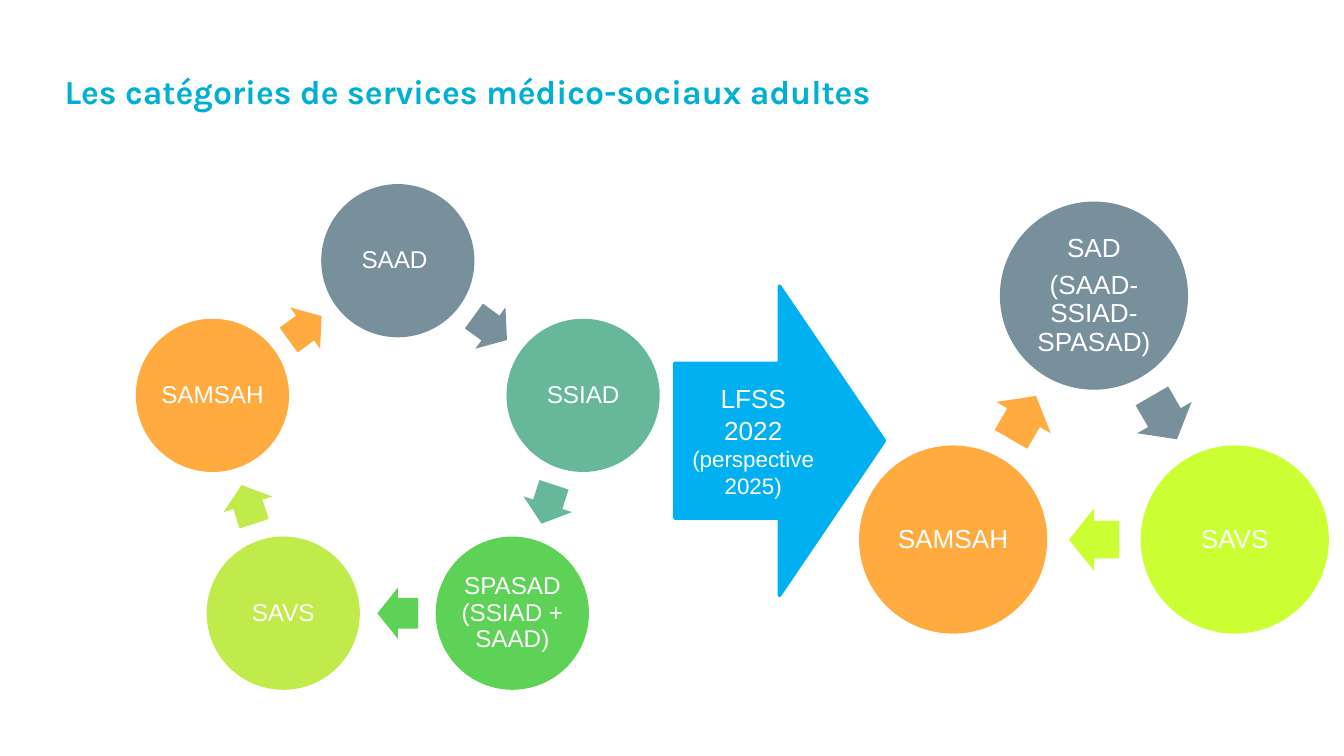
"""Build a slide that shows two cycles of services joined by an arrow."""
import math

import pptx
import pptx.dml.color
import pptx.enum.shapes
import pptx.enum.text
import pptx.util

RGBColor = pptx.dml.color.RGBColor
SHAPE = pptx.enum.shapes.MSO_SHAPE
ALIGN = pptx.enum.text.PP_ALIGN
ANCHOR = pptx.enum.text.MSO_ANCHOR
Inches = pptx.util.Inches

TITLE_BLUE = RGBColor(0x00, 0xAF, 0xD4)
ARROW_BLUE = RGBColor(0x00, 0xB0, 0xF0)
WHITE = RGBColor(0xFF, 0xFF, 0xFF)
SLATE = RGBColor(0x78, 0x90, 0x9C)
TEAL = RGBColor(0x67, 0xB8, 0x9B)
GREEN = RGBColor(0x5E, 0xD2, 0x57)
LIME = RGBColor(0xC1, 0xEA, 0x4B)
BRIGHT_LIME = RGBColor(0xCC, 0xFF, 0x33)
ORANGE = RGBColor(0xFF, 0xAB, 0x40)

BEFORE = [("SAAD ", SLATE), ("SSIAD", TEAL), ("SPASAD (SSIAD + SAAD)", GREEN),
          ("SAVS", LIME), ("SAMSAH", ORANGE)]
AFTER = [("SAD\n(SAAD-SSIAD-SPASAD)", SLATE), ("SAVS", BRIGHT_LIME),
         ("SAMSAH", ORANGE)]


def write(tf, text, sizes, font="Arial", color=WHITE, bold=False,
          align=ALIGN.CENTER, anchor=ANCHOR.MIDDLE, inset=None,
          line=None, after=0):
    """Fill a text frame with one paragraph per line; the last size repeats."""
    tf.word_wrap = True
    tf.vertical_anchor = anchor
    if inset is not None:
        tf.margin_left = tf.margin_right = Inches(inset)
        tf.margin_top = tf.margin_bottom = Inches(inset)
    for i, part in enumerate(text.split("\n")):
        p = tf.paragraphs[0] if i == 0 else tf.add_paragraph()
        p.alignment = align
        p.line_spacing = line
        p.space_before, p.space_after = pptx.util.Pt(0), pptx.util.Pt(after)
        r = p.add_run()
        r.text = part
        r.font.name, r.font.bold = font, bold
        r.font.size = pptx.util.Pt(sizes[min(i, len(sizes) - 1)])
        r.font.color.rgb = color


def add_shape(s, kind, cx, cy, w, h, color):
    """Add a flat shape centred on a point."""
    sp = s.shapes.add_shape(kind, Inches(cx - w / 2), Inches(cy - h / 2),
                            Inches(w), Inches(h))
    sp.shadow.inherit = False
    sp.fill.solid()
    sp.fill.fore_color.rgb = color
    sp.line.fill.background()
    return sp


def add_cycle(s, nodes, cx, cy, radius, diameter, size):
    """Place circles around a ring, with an arrow from each to the next."""
    step = 360 / len(nodes)
    apothem = radius * math.cos(math.radians(step / 2))
    for i, (label, color) in enumerate(nodes):
        a = math.radians(i * step)
        sp = add_shape(s, SHAPE.OVAL, cx + radius * math.sin(a),
                       cy - radius * math.cos(a), diameter, diameter, color)
        write(sp.text_frame, label, [size], inset=0.02, line=0.9,
              after=0.35 * size)
        turn = (i + 0.5) * step
        a = math.radians(turn)
        sp = add_shape(s, SHAPE.RIGHT_ARROW, cx + apothem * math.sin(a),
                       cy - apothem * math.cos(a), diameter * 4 / 15,
                       diameter / 3, color)
        sp.adjustments[0] = 0.6
        sp.rotation = turn


def add_title(s, text):
    """Move the title placeholder and fill it."""
    sp = s.shapes.title
    sp.left, sp.top = Inches(0.38), Inches(0.43)
    sp.width, sp.height = Inches(8.12), Inches(0.63)
    write(sp.text_frame, text, [18], font="Karla", color=TITLE_BLUE, bold=True,
          align=ALIGN.LEFT, anchor=ANCHOR.TOP, inset=0.1)


def add_reform_arrow(s, text):
    """Add the large arrow between the cycles."""
    sp = add_shape(s, SHAPE.RIGHT_ARROW, 5.8, 3.28, 1.56, 2.3, ARROW_BLUE)
    sp.line.color.rgb = ARROW_BLUE
    sp.line.width = pptx.util.Pt(2)
    write(sp.text_frame, text, [14, 12])


def main():
    """Build and save the slide."""
    prs = pptx.Presentation()
    prs.slide_width = Inches(10)
    prs.slide_height = prs.slide_width * 9 // 16
    s = prs.slides.add_slide(prs.slide_layouts[5])
    add_title(s, "Les catégories de services médico-sociaux adultes")
    add_cycle(s, BEFORE, 2.96, 3.39, 1.45, 1.14, 13)
    add_cycle(s, AFTER, 8.14, 3.41, 1.21, 1.4, 14)
    add_reform_arrow(s, "LFSS 2022\n(perspective 2025)")
    prs.save("out.pptx")


if __name__ == "__main__":
    main()
